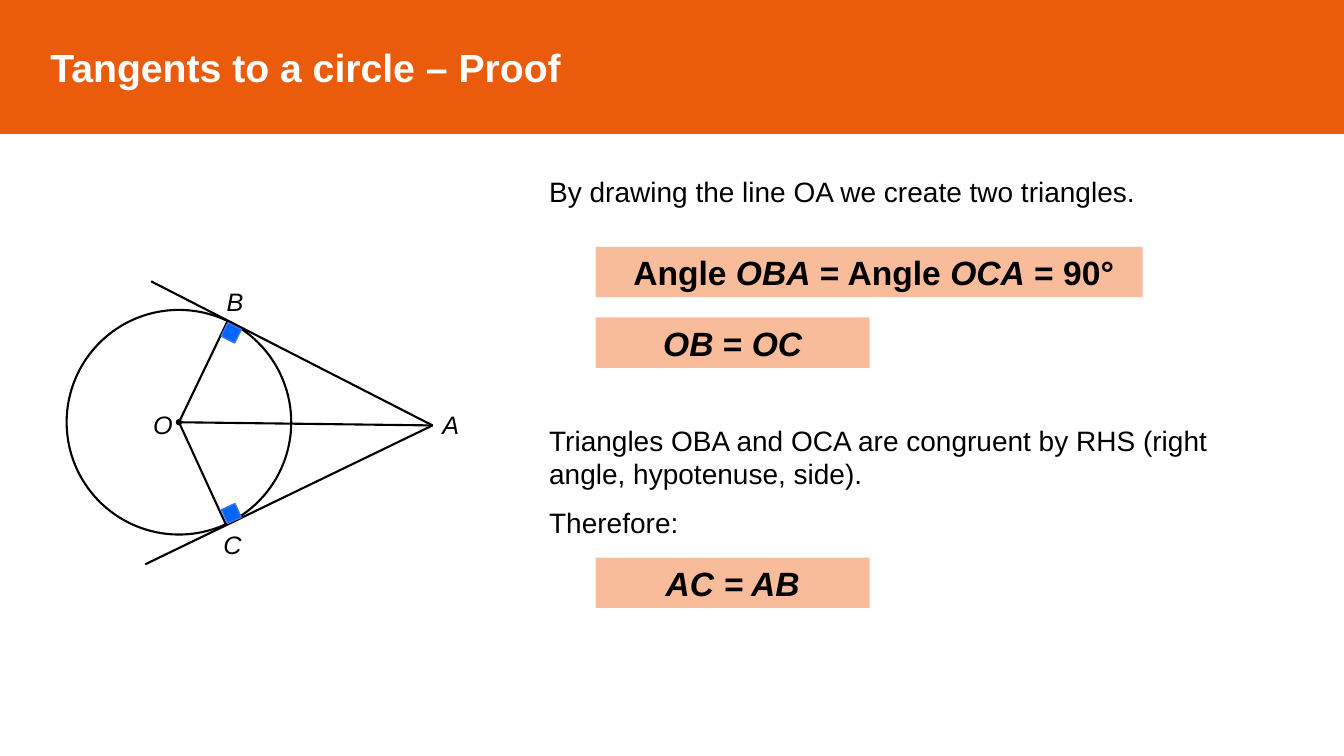
from dataclasses import dataclass

from lxml import etree
from pptx import Presentation
from pptx.dml.color import RGBColor
from pptx.enum import shapes, text
from pptx.oxml.ns import qn
from pptx.util import Cm, Pt


@dataclass(frozen=True)
class Theme:
    font: str = "Arial"
    banner: str = "EA5B0C"
    panel: str = "F9BC9A"
    ink: str = "000000"
    light: str = "FFFFFF"
    marker: str = "0066FF"
    marker_edge: str = "4775E7"
    title_size: float = 28
    result_size: float = 24
    body_size: float = 20
    label_size: float = 18
    stroke: float = 1.5
    thin: float = 1


theme = Theme()

# Content: lengths in centimetres, runs as (words, italic)
PAGE = (33.87, 19.05)
BANNER_HEIGHT = 3.35
TITLE = "Tangents to a circle – Proof"
BODY_LEFT, BODY_WIDTH = 13.59, 19.02
STATEMENTS = [  # top, height, words
    (4.27, 1.12, "By drawing the line OA we create two triangles."),
    (10.54, 1.96, "Triangles OBA and OCA are congruent by RHS "
                  "(right angle, hypotenuse, side)."),
    (12.62, 1.12, "Therefore:"),
]
RESULT_LEFT, RESULT_HEIGHT = 15.01, 1.27
RESULTS = [  # top, width, left inset, alignment, runs
    (6.22, 13.79, 0.95, text.PP_ALIGN.LEFT,
     [("Angle ", False), ("OBA", True), (" = Angle ", False),
      ("OCA", True), (" = 90°", False)]),
    (8.0, 6.91, 0.25, text.PP_ALIGN.CENTER,
     [("OB", True), (" = ", False), ("OC", True)]),
    (14.05, 6.91, 0.25, text.PP_ALIGN.CENTER, [("AC = AB", True)]),
]
POINTS = {"O": (4.51, 10.64), "A": (10.9, 10.72),
          "B": (5.74, 8.08), "C": (5.69, 13.21),
          "beyond B": (3.81, 7.09), "beyond C": (3.66, 14.22)}
SEGMENTS = [("A", "beyond B"), ("A", "beyond C"),
            ("B", "O"), ("O", "C"), ("O", "A")]
RADIUS, DOT_RADIUS = 2.83, 0.06
RIGHT_ANGLES = [((5.83, 8.39), 26.5), ((5.83, 12.94), 335.7)]
MARKER_HALF = 0.19
LABELS = {"A": (10.9, 10.19), "B": (5.46, 7.09),
          "C": (5.38, 13.21), "O": (3.61, 10.19)}
LABEL_SIZE = (0.84, 1.02)

deck = Presentation()
deck.slide_width, deck.slide_height = map(Cm, PAGE)
page = deck.slides.add_slide(deck.slide_layouts[6])


def colour(code):
    return RGBColor.from_string(code)


def add_preset(kind, bounds, fill=None, line=None, width=theme.thin):
    shape = page.shapes.add_shape(kind, *map(Cm, bounds))
    shape.shadow.inherit = False
    if fill:
        shape.fill.solid()
        shape.fill.fore_color.rgb = colour(fill)
    else:
        shape.fill.background()
    if line:
        shape.line.color.rgb = colour(line)
        shape.line.width = Pt(width)
    else:
        shape.line.fill.background()
    return shape


def add_centred(kind, centre, half, **style):
    x, y = centre
    return add_preset(kind, (x - half, y - half, 2 * half, 2 * half), **style)


def write(shape, runs, size, ink=theme.ink, bold=False,
          align=text.PP_ALIGN.LEFT, anchor=text.MSO_ANCHOR.TOP, inset=0.25):
    frame = shape.text_frame
    frame.word_wrap = True
    frame.vertical_anchor = anchor
    frame.margin_left = Cm(inset)
    para = frame.paragraphs[0]
    para.alignment = align
    for words, italic in runs:
        span = para.add_run()
        span.text = words
        span.font.name = theme.font
        span.font.size = Pt(size)
        span.font.bold = bold
        span.font.italic = italic
        span.font.color.rgb = colour(ink)


def add_text(bounds, words, size, italic=False):
    box = page.shapes.add_textbox(*map(Cm, bounds))
    write(box, [(words, italic)], size)


rectangle, oval = shapes.MSO_SHAPE.RECTANGLE, shapes.MSO_SHAPE.OVAL

# Title banner
banner = add_preset(rectangle, (0, 0, PAGE[0], BANNER_HEIGHT),
                    theme.banner, theme.banner)
write(banner, [(TITLE, False)], theme.title_size, theme.light, True,
      anchor=text.MSO_ANCHOR.MIDDLE, inset=1.27)

# Circle with its centre
add_centred(oval, POINTS["O"], RADIUS, line=theme.ink, width=theme.stroke)
add_centred(oval, POINTS["O"], DOT_RADIUS, fill=theme.ink, line=theme.ink)

# Tangents, radii and the line OA
for start, end in SEGMENTS:
    segment = page.shapes.add_connector(
        shapes.MSO_CONNECTOR.STRAIGHT,
        *map(Cm, POINTS[start] + POINTS[end]))
    segment.line.color.rgb = colour(theme.ink)
    segment.line.width = Pt(theme.stroke)
    etree.SubElement(segment._element.spPr, qn("a:effectLst"))

# Right angle markers
for centre, angle in RIGHT_ANGLES:
    marker = add_centred(rectangle, centre, MARKER_HALF,
                         fill=theme.marker, line=theme.marker_edge)
    marker.rotation = angle

# Point labels
for letter, corner in LABELS.items():
    add_text(corner + LABEL_SIZE, letter, theme.label_size, italic=True)

# Steps of the proof
for top, height, words in STATEMENTS:
    add_text((BODY_LEFT, top, BODY_WIDTH, height), words, theme.body_size)

for top, width, inset, align, runs in RESULTS:
    panel = add_preset(rectangle, (RESULT_LEFT, top, width, RESULT_HEIGHT),
                       theme.panel)
    write(panel, runs, theme.result_size, bold=True, align=align, inset=inset)

deck.save("out.pptx")
